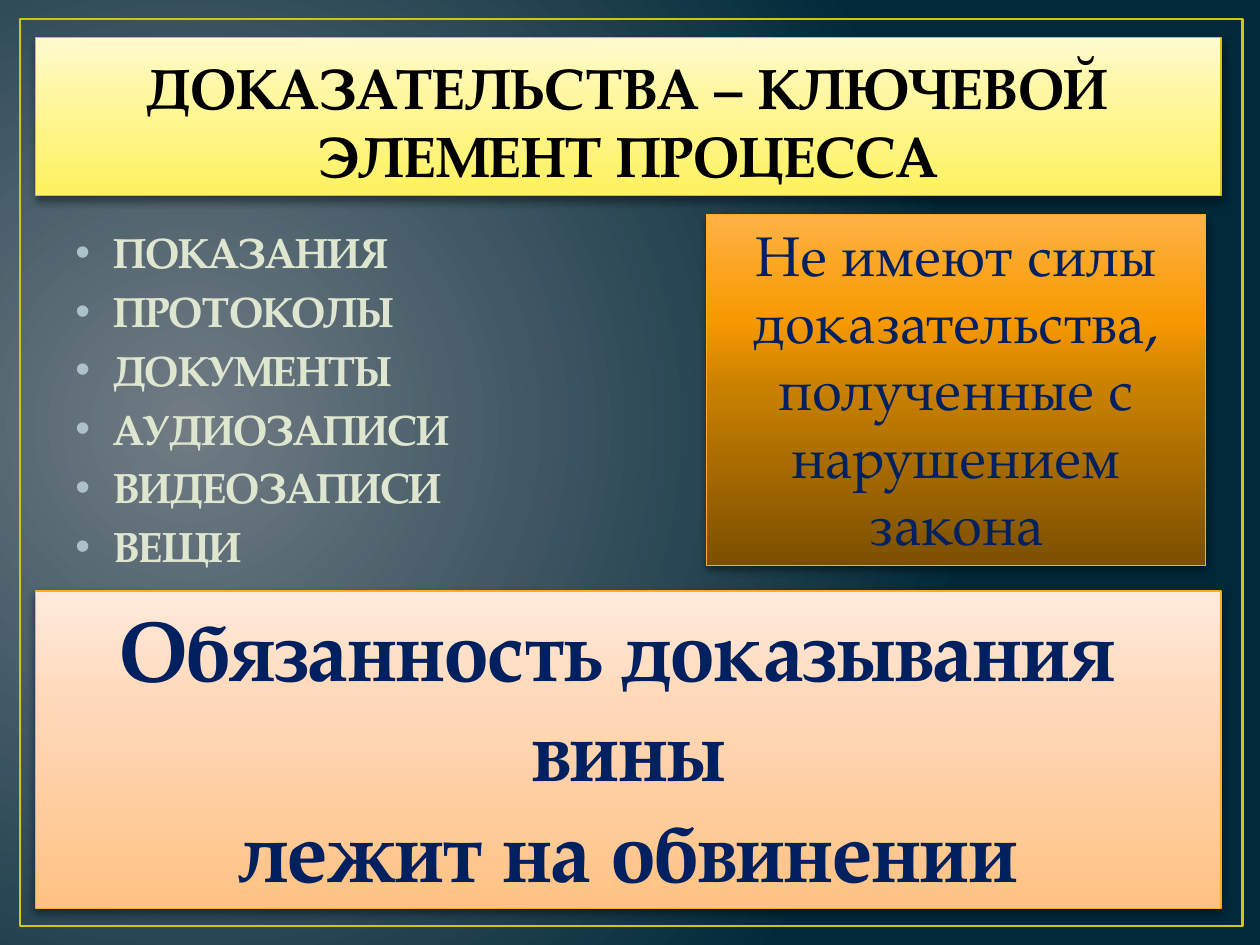
from lxml import etree
from pptx import Presentation
from pptx.dml.color import RGBColor
from pptx.enum.shapes import MSO_SHAPE
from pptx.enum.text import MSO_ANCHOR, PP_ALIGN
from pptx.oxml import parse_xml
from pptx.oxml.ns import nsdecls, qn
from pptx.util import Inches, Pt

FONT = "TeX Gyre Pagella"
BLACK = RGBColor(0x00, 0x00, 0x00)
NAVY = RGBColor(0x00, 0x20, 0x60)
PALE_GREEN = RGBColor(0xDF, 0xE6, 0xD0)
BULLET = RGBColor(0xAC, 0xC2, 0xC9)
OLIVE = RGBColor(0xCF, 0xC6, 0x0D)
AMBER = RGBColor(0xFF, 0xAD, 0x1C)

# Gradients: (percent, colour); panels run from bottom to top
BACKDROP = [(0, "717C84"), (100, "01293A")]
YELLOW = [(0, "FEF25E"), (65, "FFF7A2"), (100, "FFFBCF")]
PEACH = [(0, "FFC283"), (65, "FFD9BA"), (100, "FFEBDC")]
ORANGE = [(0, "7C4F00"), (50, "C88000"), (70, "F79900"), (100, "FFB246")]
UPWARD = '<a:lin ang="16200000" scaled="0"/>'
RADIAL = ('<a:path path="circle"><a:fillToRect l="15000" t="50000" '
          'r="85000" b="60000"/></a:path>')

# Content
EVIDENCE = ["ПОКАЗАНИЯ", "ПРОТОКОЛЫ", "ДОКУМЕНТЫ",
            "АУДИОЗАПИСИ", "ВИДЕОЗАПИСИ", "ВЕЩИ"]
PANELS = [
    dict(box=(0.28, 0.3, 9.41, 1.25), stops=YELLOW, edge=OLIVE,
         lines=["ДОКАЗАТЕЛЬСТВА – КЛЮЧЕВОЙ ЭЛЕМЕНТ ПРОЦЕССА"],
         size=32.4, color=BLACK, bold=True, anchor=MSO_ANCHOR.BOTTOM,
         spacing=50),
    dict(box=(0.28, 4.69, 9.41, 2.52), stops=PEACH, edge=AMBER,
         lines=["Обязанность доказывания ", "вины", "лежит на обвинении"],
         size=48, color=NAVY, bold=True),
    dict(box=(5.61, 1.7, 3.96, 2.79), stops=ORANGE, edge=AMBER,
         lines=["Не имеют силы доказательства, полученные с нарушением закона"],
         size=32, color=NAVY, bold=False),
]


def set_gradient(fill, holder, stops, direction):
    """Swap a plain fill for a gradient with any number of stops."""
    fill.solid()
    solid = holder.find(".//" + qn("a:solidFill"))
    stop_xml = "".join(f'<a:gs pos="{pos * 1000}"><a:srgbClr val="{color}"/></a:gs>'
                       for pos, color in stops)
    solid.getparent().replace(solid, parse_xml(
        f'<a:gradFill {nsdecls("a")} rotWithShape="1">'
        f"<a:gsLst>{stop_xml}</a:gsLst>{direction}</a:gradFill>"))


def add_shadow(sp):
    sp.shadow.inherit = False
    effects = sp.element.spPr.find(qn("a:effectLst"))
    effects.append(parse_xml(
        f'<a:outerShdw {nsdecls("a")} blurRad="{Pt(5)}" dist="{Pt(2)}" '
        'dir="5400000" rotWithShape="0"><a:srgbClr val="000000">'
        '<a:alpha val="43000"/></a:srgbClr></a:outerShdw>'))


def write_lines(tf, lines, size, color, bold, align):
    tf.word_wrap = True
    for i, line in enumerate(lines):
        p = tf.paragraphs[0] if i == 0 else tf.add_paragraph()
        p.alignment = align
        r = p.add_run()
        r.text = line
        r.font.name, r.font.size, r.font.bold = FONT, Pt(size), bold
        r.font.color.rgb = color


def add_bullet(p):
    pPr = p._p.get_or_add_pPr()
    pPr.set("marL", str(Inches(0.3)))
    pPr.set("indent", str(-Inches(0.3)))
    color = etree.SubElement(pPr, qn("a:buClr"))
    etree.SubElement(color, qn("a:srgbClr"), val=str(BULLET))
    etree.SubElement(pPr, qn("a:buFont"), typeface="Arial")
    etree.SubElement(pPr, qn("a:buChar"), char="•")


def add_panel(slide, box, stops, edge, lines, size, color, bold,
              anchor=MSO_ANCHOR.TOP, spacing=0):
    sp = slide.shapes.add_shape(MSO_SHAPE.RECTANGLE, *map(Inches, box))
    set_gradient(sp.fill, sp.element.spPr, stops, UPWARD)
    sp.line.color.rgb = edge
    sp.line.width = Pt(0.75)
    add_shadow(sp)
    tf = sp.text_frame
    tf.vertical_anchor = anchor
    write_lines(tf, lines, size, color, bold, PP_ALIGN.CENTER)
    if spacing:
        for p in tf.paragraphs:
            for r in p.runs:
                r.font._element.set("spc", str(spacing))


prs = Presentation()
prs.slide_width, prs.slide_height = Inches(10), Inches(7.5)
slide = prs.slides.add_slide(prs.slide_layouts[6])

# Background and thin frame
set_gradient(slide.background.fill, slide.element, BACKDROP, RADIAL)
frame = slide.shapes.add_shape(
    MSO_SHAPE.RECTANGLE, *map(Inches, (0.16, 0.15, 9.7, 7.2)))
frame.shadow.inherit = False
frame.fill.background()
frame.line.color.rgb = OLIVE
frame.line.width = Pt(1.5)

# Kinds of evidence
body = slide.shapes.add_textbox(*map(Inches, (0.5, 1.75, 9, 3.26)))
write_lines(body.text_frame, EVIDENCE, 24, PALE_GREEN, True, PP_ALIGN.LEFT)
for p in body.text_frame.paragraphs:
    p.space_before = Pt(4.8)
    add_bullet(p)

# Title, burden of proof and warning
for panel in PANELS:
    add_panel(slide, **panel)

prs.save("out.pptx")
